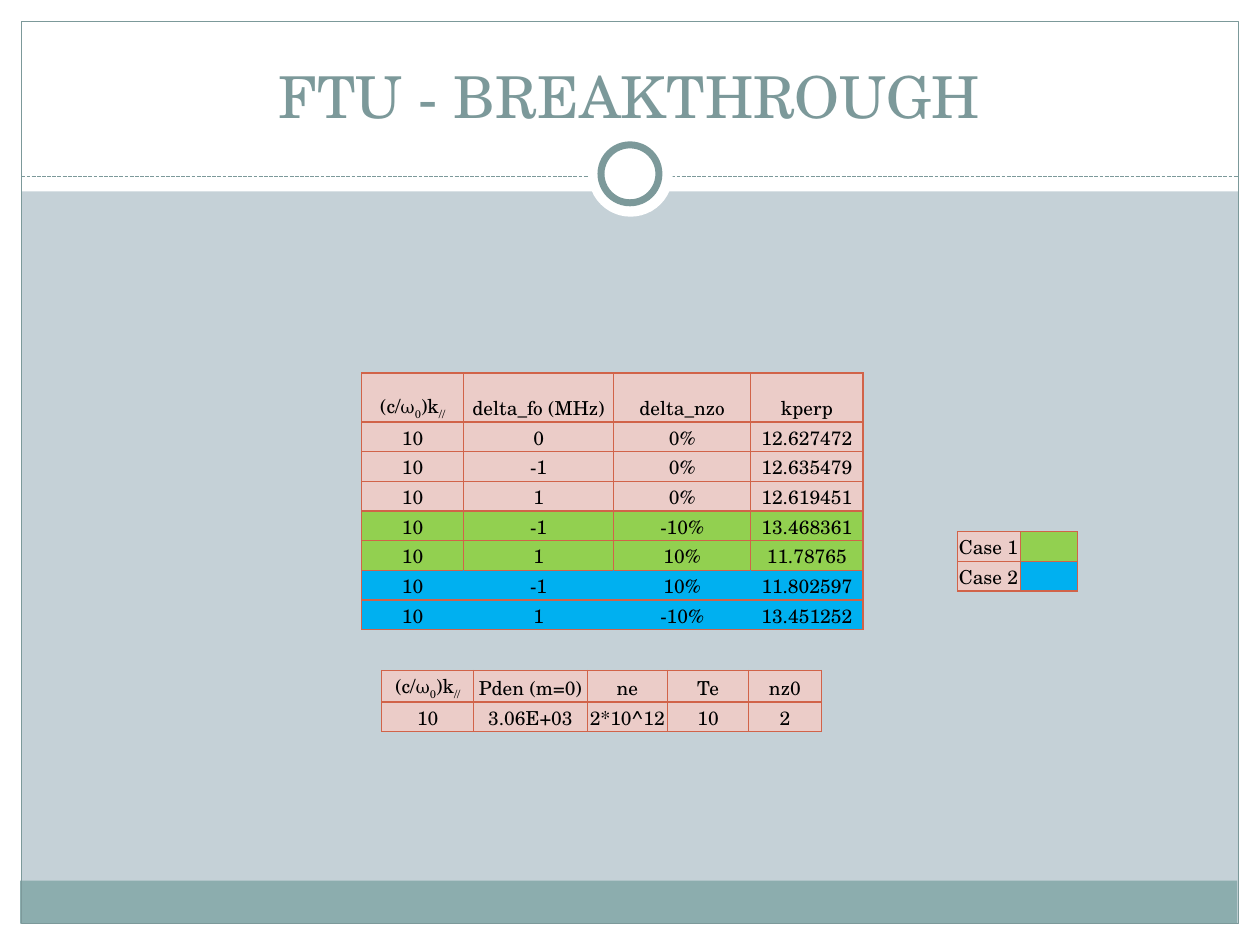
from pptx import Presentation
from pptx.dml.color import RGBColor as RGB
from pptx.enum.dml import MSO_LINE as Dash
from pptx.enum.shapes import MSO_CONNECTOR as Conn, MSO_SHAPE as Kind
from pptx.enum.text import MSO_ANCHOR as Anchor, PP_ALIGN as Align
from pptx.oxml.ns import qn
from pptx.util import Inches, Pt
from lxml.etree import SubElement

FONT = "TeX Gyre Schola"
BACK = RGB(0xC5, 0xD1, 0xD7)
WHITE = RGB(0xFF, 0xFF, 0xFF)
BLACK = RGB(0, 0, 0)
TEAL = RGB(0x7C, 0x99, 0x9A)
BAND = RGB(0x8C, 0xAD, 0xAE)
RUST = RGB(0xD1, 0x63, 0x49)
PINK = RGB(0xEB, 0xCC, 0xC8)
GREEN = RGB(0x92, 0xD0, 0x50)
BLUE = RGB(0x00, 0xB0, 0xF0)

TITLE = "FTU - BREAKTHROUGH"
RATIO = (("(c/ω", False), ("0", True), (")k", False), ("//", True))

SHAPES = [
    (Kind.RECTANGLE, (0, 7.33, 10, 0.17), WHITE, 0),
    (Kind.RECTANGLE, (0, 0, 10, 1.52), WHITE, 0),
    (Kind.RECTANGLE, (0, 0, 0.17, 7.5), WHITE, 0),
    (Kind.RECTANGLE, (9.83, 0, 0.17, 7.5), WHITE, 0),
    (Kind.RECTANGLE, (0.16, 6.99, 9.66, 0.34), BAND, 0),
    (Kind.RECTANGLE, (0.17, 0.17, 9.66, 7.16), None, 0.75),
    (Kind.OVAL, (4.67, 1.05, 0.67, 0.67), WHITE, 0),
    (Kind.OVAL, (4.77, 1.15, 0.46, 0.46), WHITE, 4),
]

PLASMA = [
    (RATIO, "Pden (m=0)", "ne", "Te", "nz0"),
    ("10", "3.06E+03", "2*10^12", "10", "2"),
]
RESULTS = [
    (RATIO, "delta_fo (MHz)", "delta_nzo", "kperp"),
    ("10", "0", "0%", "12.627472"),
    ("10", "-1", "0%", "12.635479"),
    ("10", "1", "0%", "12.619451"),
    ("10", "-1", "-10%", "13.468361"),
    ("10", "1", "10%", "11.78765"),
    ("10", "-1", "10%", "11.802597"),
    ("10", "1", "-10%", "13.451252"),
]
CASES = [("Case 1", ""), ("Case 2", "")]
ROW = 0.21
TABLES = [
    (PLASMA, (3.03, 5.32), (0.73, 0.9, 0.64, 0.64, 0.58), [ROW] * 2,
     [[PINK] * 5] * 2, Align.CENTER),
    (RESULTS, (2.87, 2.96), (0.81, 1.19, 1.09, 0.89), [0.39] + [ROW] * 7,
     [[PINK] * 4] * 4 + [[GREEN] * 4] * 2 + [[BLUE] * 4] * 2, Align.CENTER),
    (CASES, (7.6, 4.22), (0.5, 0.45), [ROW] * 2,
     [[PINK, GREEN], [PINK, BLUE]], Align.LEFT),
]


def set_font(font, size, color):
    font.name, font.size, font.bold = FONT, Pt(size), False
    font.color.rgb = color


def add_shape(slide, kind, box, fill, width):
    shape = slide.shapes.add_shape(kind, *map(Inches, box))
    shape.shadow.inherit = False
    if fill is None:
        shape.fill.background()
    else:
        shape.fill.solid()
        shape.fill.fore_color.rgb = fill
    if width:
        shape.line.color.rgb = TEAL
        shape.line.width = Pt(width)
    else:
        shape.line.fill.background()


def add_rule(slide):
    ends = map(Inches, (0.17, 1.4, 9.83, 1.4))
    rule = slide.shapes.add_connector(Conn.STRAIGHT, *ends)
    rule.line.color.rgb = TEAL
    rule.line.width = Pt(0.75)
    rule.line.dash_style = Dash.SQUARE_DOT
    SubElement(rule._element.spPr, qn("a:effectLst"))


def set_edge(cell, side, color):
    props = cell._tc.get_or_add_tcPr()
    line = SubElement(props, qn("a:ln" + side), w=str(Pt(0.75)))
    paint = SubElement(line, qn("a:solidFill"))
    SubElement(paint, qn("a:srgbClr"), val=str(color))


def fill_cell(cell, text, align):
    cell.vertical_anchor = Anchor.BOTTOM
    cell.margin_left = cell.margin_right = cell.margin_top = Inches(0.01)
    cell.margin_bottom = 0
    para = cell.text_frame.paragraphs[0]
    para.alignment = align
    set_font(para.font, 11, BLACK)
    parts = ((text, False),) if isinstance(text, str) else text
    for part, low in parts:
        if part:
            run = para.add_run()
            run.text = part
            if low:
                run.font._element.set("baseline", "-25000")


def add_table(slide, data, spot, cols, rows, fills, align):
    box = (*spot, sum(cols), sum(rows))
    frame = slide.shapes.add_table(len(rows), len(cols), *map(Inches, box))
    table = frame.table
    table.first_row = table.horz_banding = False
    for col, width in zip(table.columns, cols):
        col.width = Inches(width)
    for r, height in enumerate(rows):
        table.rows[r].height = Inches(height)
        hues = [None, *fills[r], None]
        for c, text in enumerate(data[r]):
            cell = table.cell(r, c)
            fill_cell(cell, text, align)
            left, hue, right = hues[c:c + 3]
            set_edge(cell, "L", BLUE if left == hue == BLUE else RUST)
            set_edge(cell, "R", BLUE if right == hue == BLUE else RUST)
            set_edge(cell, "T", RUST)
            set_edge(cell, "B", RUST)
            cell.fill.solid()
            cell.fill.fore_color.rgb = hue


def set_title(slide):
    title = slide.shapes.title
    box = map(Inches, (0.33, 0.25, 9.33, 0.83))
    title.left, title.top, title.width, title.height = box
    frame = title.text_frame
    frame.text = TITLE
    frame.vertical_anchor = Anchor.BOTTOM
    para = frame.paragraphs[0]
    para.alignment = Align.CENTER
    set_font(para.font, 33, TEAL)
    slide.shapes._spTree.append(title._element)


def main():
    deck = Presentation()
    deck.slide_width, deck.slide_height = Inches(10), Inches(7.5)
    slide = deck.slides.add_slide(deck.slide_layouts[5])
    slide.background.fill.solid()
    slide.background.fill.fore_color.rgb = BACK
    for item in SHAPES[:6]:
        add_shape(slide, *item)
    add_rule(slide)
    for item in SHAPES[6:]:
        add_shape(slide, *item)
    set_title(slide)
    for item in TABLES:
        add_table(slide, *item)
    deck.save("out.pptx")


if __name__ == "__main__":
    main()
